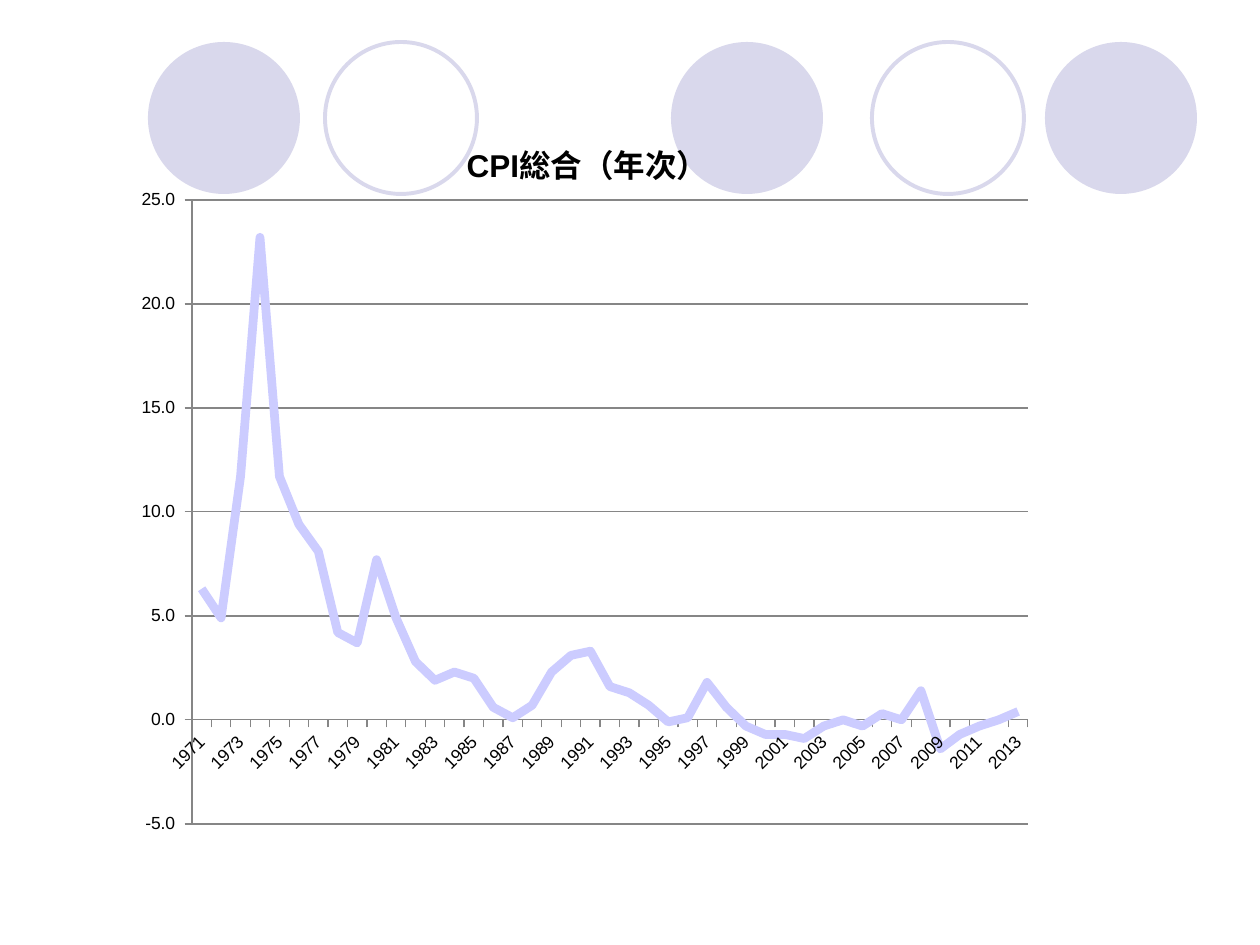
from dataclasses import dataclass

from lxml import etree
from pptx import Presentation
from pptx import util as u
from pptx.chart.data import CategoryChartData
from pptx.dml.color import RGBColor
from pptx.enum import chart as ch, shapes
from pptx.oxml import parse_xml
from pptx.oxml.ns import nsdecls, qn


@dataclass(frozen=True)
class Theme:
    font: str = "Arial"
    ink: RGBColor = RGBColor(0x00, 0x00, 0x00)
    circle: RGBColor = RGBColor(0xD9, 0xD8, 0xEC)
    series: RGBColor = RGBColor(0xCC, 0xCC, 0xFF)
    axis: RGBColor = RGBColor(0x86, 0x86, 0x86)
    title_pt: int = 18
    label_pt: int = 10
    outline_pt: float = 2.25
    series_pt: int = 5
    axis_pt: float = 0.75


THEME = Theme()
PX_PER_INCH = 126

# Decorative circles: left, top, filled
CIRCLE_SIZE = 152
CIRCLES = [(671, 42, True), (1045, 42, True), (148, 42, True),
           (872, 42, False), (325, 42, False)]

# Chart frame, plot area and title corner, in px on the slide
CHART = (123, 96, 922, 753)
PLOT = (192, 200, 836, 624)
TITLE_AT = (461, 131)

FIRST_YEAR = 1971
CPI = [6.3, 4.9, 11.7, 23.2, 11.7, 9.4, 8.1, 4.2, 3.7, 7.7, 4.9,
       2.8, 1.9, 2.3, 2, 0.6, 0.1, 0.7, 2.3, 3.1, 3.3, 1.6,
       1.3, 0.7, -0.1, 0.1, 1.8, 0.6, -0.3, -0.7, -0.7, -0.9, -0.3,
       0, -0.3, 0.3, 0, 1.4, -1.4, -0.7, -0.3, 0, 0.4]


def px(n):
    return u.Inches(n / PX_PER_INCH)


def set_line(line, color, width):
    line.color.rgb = color
    line.width = u.Pt(width)


def set_font(font, size, bold=False):
    font.name = THEME.font
    font.size = u.Pt(size)
    font.bold = bold
    font.color.rgb = THEME.ink


def add_circle(slide, left, top, filled):
    sp = slide.shapes.add_shape(shapes.MSO_SHAPE.OVAL, px(left), px(top),
                                px(CIRCLE_SIZE), px(CIRCLE_SIZE))
    sp.shadow.inherit = False
    if filled:
        sp.fill.solid()
        sp.fill.fore_color.rgb = THEME.circle
        sp.line.fill.background()
    else:
        sp.fill.background()
        set_line(sp.line, THEME.circle, THEME.outline_pt)


def manual_layout(left, top, width=None, height=None):
    """Layout element with slide px turned into fractions of the chart."""
    x, y, w, h = CHART
    parts = [("xMode", "edge"), ("yMode", "edge"),
             ("x", round((left - x) / w, 4)), ("y", round((top - y) / h, 4))]
    if width:
        parts.insert(0, ("layoutTarget", "inner"))
        parts += [("w", round(width / w, 4)), ("h", round(height / h, 4))]
    body = "".join(f'<c:{tag} val="{val}"/>' for tag, val in parts)
    return parse_xml(f'<c:layout {nsdecls("c")}><c:manualLayout>{body}'
                     '</c:manualLayout></c:layout>')


def place(element, layout, index):
    for old in element.findall(qn("c:layout")):
        element.remove(old)
    element.insert(index, layout)


def format_axis(axis):
    axis.major_tick_mark = ch.XL_TICK_MARK.OUTSIDE
    axis.minor_tick_mark = ch.XL_TICK_MARK.NONE
    set_line(axis.format.line, THEME.axis, THEME.axis_pt)
    set_font(axis.tick_labels.font, THEME.label_pt)


def format_category_axis(axis):
    format_axis(axis)
    # Slanted labels, one for every second year
    axis._element.find(qn("c:txPr")).find(qn("a:bodyPr")).set("rot", "-2700000")
    no_multi = axis._element.find(qn("c:noMultiLvlLbl"))
    for tag, step in (("c:tickLblSkip", "2"), ("c:tickMarkSkip", "1")):
        skip = etree.Element(qn(tag), val=step)
        no_multi.addprevious(skip)


def format_value_axis(axis):
    format_axis(axis)
    axis.minimum_scale, axis.maximum_scale, axis.major_unit = -5, 25, 5
    axis.has_major_gridlines = True
    set_line(axis.major_gridlines.format.line, THEME.axis, THEME.axis_pt)
    axis.tick_labels.number_format = "0.0_ "
    axis.tick_labels.number_format_is_linked = False


def add_title(chart, title):
    chart.has_title = True
    tf = chart.chart_title.text_frame
    tf.text = title
    set_font(tf.paragraphs[0].runs[0].font, THEME.title_pt, bold=True)
    chart.chart_title.include_in_layout = False
    place(chart.chart_title._element, manual_layout(*TITLE_AT), 1)


def add_line_chart(slide, title, first_year, values):
    data = CategoryChartData(number_format="0.0_ ")
    data.categories = [str(first_year + i) for i in range(len(values))]
    data.add_series("Series 1", values)
    chart = slide.shapes.add_chart(ch.XL_CHART_TYPE.LINE,
                                   *map(px, CHART), data).chart
    chart.has_legend = False
    set_font(chart.font, THEME.label_pt)
    add_title(chart, title)

    plot = chart.plots[0]
    plot.vary_by_categories = False
    series = plot.series[0]
    series.smooth = False
    series.marker.style = ch.XL_MARKER_STYLE.NONE
    set_line(series.format.line, THEME.series, THEME.series_pt)

    format_category_axis(chart.category_axis)
    format_value_axis(chart.value_axis)
    plot_area = chart._chartSpace.chart.plotArea
    place(plot_area, manual_layout(*PLOT), 0)


def main():
    prs = Presentation()
    prs.slide_width, prs.slide_height = u.Inches(10), u.Inches(7.5)
    slide = prs.slides.add_slide(prs.slide_layouts[6])

    # Background circles, then the chart over them
    for circle in CIRCLES:
        add_circle(slide, *circle)
    add_line_chart(slide, "CPI総合（年次）", FIRST_YEAR, CPI)

    prs.save("out.pptx")


if __name__ == "__main__":
    main()
